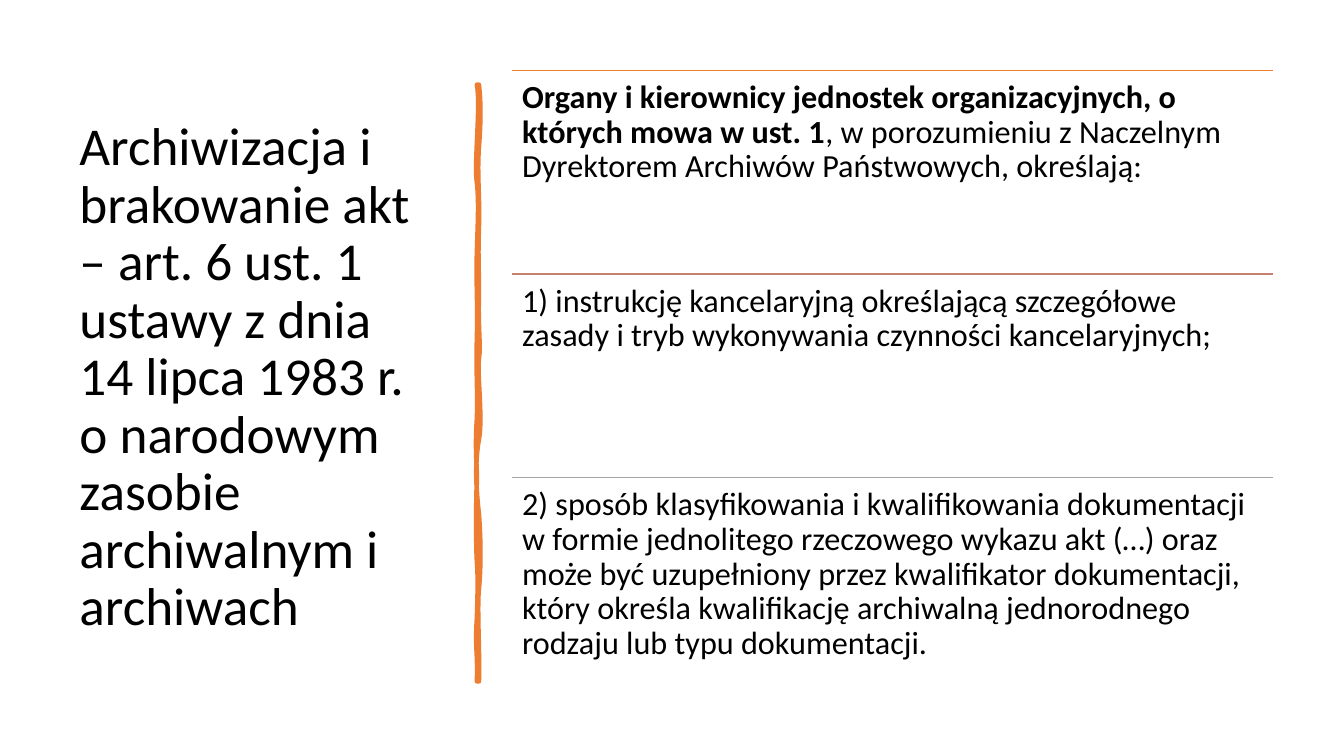
from pptx import Presentation
from pptx.dml.color import RGBColor
from pptx.enum.shapes import MSO_CONNECTOR
from pptx.enum.text import MSO_ANCHOR
from pptx.oxml.ns import qn
from pptx.util import Inches, Pt
from lxml import etree

FONT = "Calibri"
BLACK = "000000"
ORANGE = "ED7D31"


def color(hex_value):
    return RGBColor.from_string(hex_value)


def add_text(left, top, width, height, runs, size, inset, anchor):
    """Add a wrapped text box with one paragraph of (text, bold) runs."""
    box = slide.shapes.add_textbox(Inches(left), Inches(top), Inches(width), Inches(height))
    frame = box.text_frame
    frame.word_wrap = True
    frame.vertical_anchor = anchor
    frame.margin_left = frame.margin_right = Inches(0.1)
    frame.margin_top = frame.margin_bottom = Inches(inset)
    paragraph = frame.paragraphs[0]
    paragraph.line_spacing = 0.9
    for text, bold in runs:
        run = paragraph.add_run()
        run.text = text
        run.font.name = FONT
        run.font.size = Pt(size)
        run.font.bold = bold
        run.font.color.rgb = color(BLACK)


presentation = Presentation()
presentation.slide_width = Inches(13.33)
presentation.slide_height = Inches(7.5)
slide = presentation.slides.add_slide(presentation.slide_layouts[6])

# Title
title = (
    "Archiwizacja i brakowanie akt – art. 6 ust. 1 ustawy z dnia "
    "14 lipca 1983 r. o narodowym zasobie archiwalnym i archiwach"
)
add_text(0.69, 0.7, 3.74, 6.11, [(title, False)], 38, 0.05, MSO_ANCHOR.MIDDLE)

# Hand-drawn divider: cubic curves down the right edge and up the left one,
# each given as two control points and an end point
divider_curves = [
    ((4.77, 1.02), (4.77, 1.19), (4.75, 1.46)),
    ((4.73, 1.73), (4.76, 1.95), (4.75, 2.26)),
    ((4.74, 2.57), (4.75, 2.62), (4.75, 2.94)),
    ((4.74, 3.25), (4.77, 3.42), (4.75, 3.56)),
    ((4.73, 3.7), (4.79, 4.14), (4.75, 4.36)),
    ((4.71, 4.57), (4.72, 4.84), (4.75, 5.1)),
    ((4.77, 5.36), (4.77, 5.64), (4.75, 5.84)),
    ((4.73, 6.03), (4.76, 6.5), (4.75, 6.76)),
    ((4.74, 6.76), (4.73, 6.76), (4.73, 6.76)),
    ((4.74, 6.46), (4.71, 6.44), (4.73, 6.13)),
    ((4.74, 5.83), (4.74, 5.7), (4.73, 5.57)),
    ((4.72, 5.44), (4.72, 4.95), (4.73, 4.77)),
    ((4.73, 4.59), (4.71, 4.45), (4.73, 4.15)),
    ((4.74, 3.86), (4.72, 3.73), (4.73, 3.35)),
    ((4.74, 2.98), (4.72, 2.81), (4.73, 2.5)),
    ((4.74, 2.18), (4.75, 2.0), (4.73, 1.81)),
    ((4.7, 1.63), (4.77, 1.04), (4.73, 0.84)),
]
builder = slide.shapes.build_freeform(Inches(4.75), Inches(0.84))
builder.add_line_segments(
    [(Inches(x), Inches(y)) for _, _, (x, y) in divider_curves], close=True
)
divider = builder.convert_to_shape()
divider.shadow.inherit = False
divider.fill.solid()
divider.fill.fore_color.rgb = color(ORANGE)
divider.line.color.rgb = color(ORANGE)
divider.line.width = Pt(3.25)
etree.SubElement(divider._element.spPr.find(qn("a:ln")), qn("a:round"))

# Turn the straight segments into curves by adding their control points
segments = list(divider._element.iter(qn("a:lnTo")))
for segment, curve in zip(segments, divider_curves):
    bezier = etree.Element(qn("a:cubicBezTo"))
    for x, y in curve:
        etree.SubElement(
            bezier, qn("a:pt"),
            x=str(Inches(x) - divider.left), y=str(Inches(y) - divider.top),
        )
    segment.getparent().replace(segment, bezier)

# Ruled list
LIST_LEFT, LIST_TOP, LIST_WIDTH, ROW_HEIGHT = 5.08, 0.7, 7.55, 2.02
rows = [
    (ORANGE, [
        ("Organy i kierownicy jednostek organizacyjnych, o których mowa w ust. 1", True),
        (", w porozumieniu z Naczelnym Dyrektorem Archiwów Państwowych, określają:", False),
    ]),
    ("C48170", [
        ("1) instrukcję kancelaryjną określającą szczegółowe zasady i tryb "
         "wykonywania czynności kancelaryjnych;", False),
    ]),
    ("A5A5A5", [
        ("2) sposób klasyfikowania i kwalifikowania dokumentacji w formie jednolitego "
         "rzeczowego wykazu akt (…) oraz może być uzupełniony przez kwalifikator "
         "dokumentacji, który określa kwalifikację archiwalną jednorodnego rodzaju "
         "lub typu dokumentacji.", False),
    ]),
]
for index, (rule_color, runs) in enumerate(rows):
    top = LIST_TOP + index * ROW_HEIGHT
    rule = slide.shapes.add_connector(
        MSO_CONNECTOR.STRAIGHT,
        Inches(LIST_LEFT), Inches(top), Inches(LIST_LEFT + LIST_WIDTH), Inches(top),
    )
    rule.line.color.rgb = color(rule_color)
    rule.line.width = Pt(1)
    etree.SubElement(rule._element.spPr, qn("a:effectLst"))
    add_text(LIST_LEFT, top, LIST_WIDTH, ROW_HEIGHT, runs, 23, 0.1, MSO_ANCHOR.TOP)

presentation.save("out.pptx")
